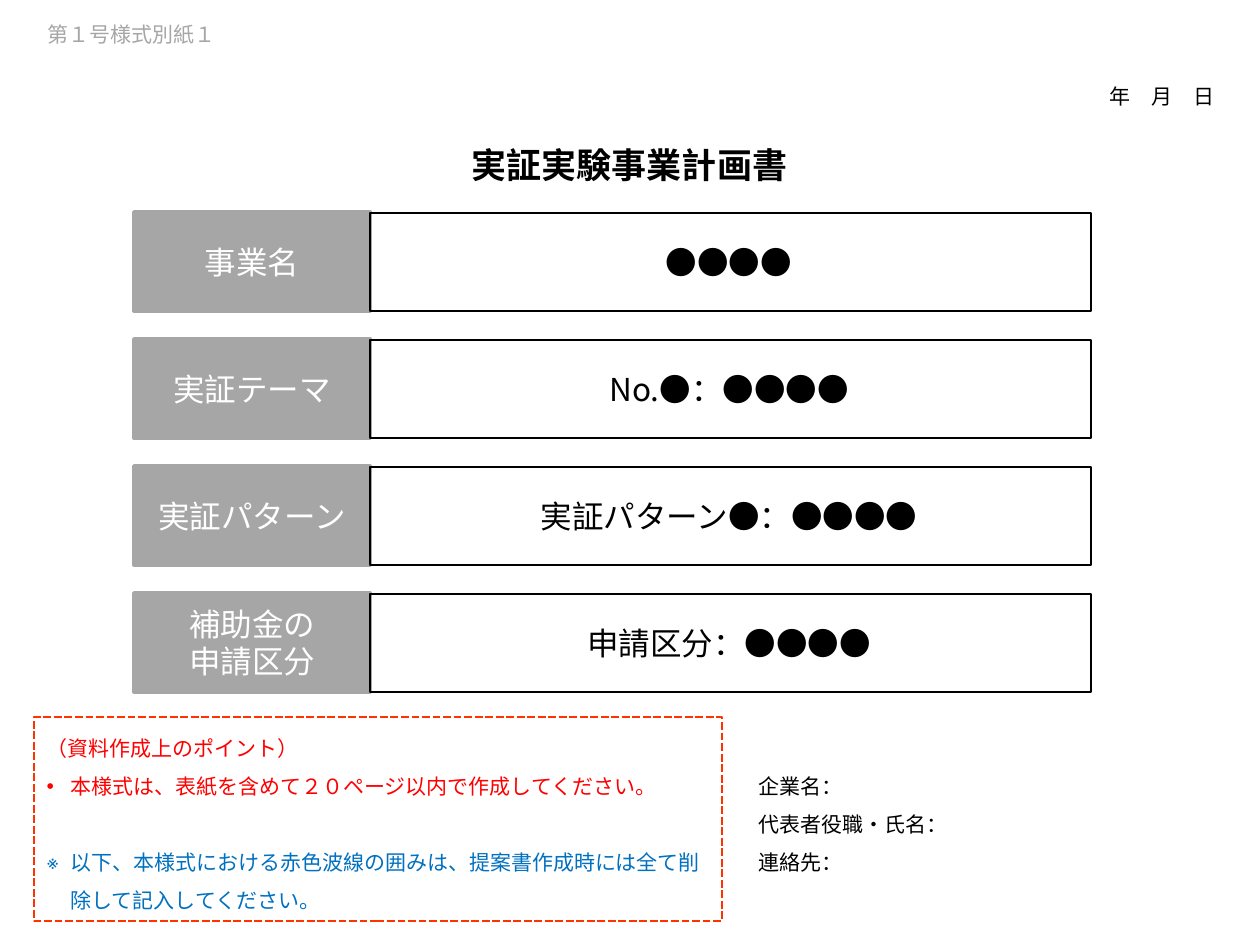
from lxml import etree
from pptx import Presentation
from pptx.dml.color import RGBColor
from pptx.enum.dml import MSO_LINE
from pptx.enum.shapes import MSO_SHAPE
from pptx.enum.text import MSO_ANCHOR, MSO_AUTO_SIZE, PP_ALIGN
from pptx.oxml.ns import qn
from pptx.util import Pt

RECT = MSO_SHAPE.RECTANGLE
DASH = MSO_LINE.SQUARE_DOT
TOP, MID = MSO_ANCHOR.TOP, MSO_ANCHOR.MIDDLE
FIT = MSO_AUTO_SIZE.NONE
LEFT, MIDST, RIGHT = PP_ALIGN.LEFT, PP_ALIGN.CENTER, PP_ALIGN.RIGHT
SCALE = 914400 / 126

theme = {
    "font": "Noto Sans CJK JP",
    "black": RGBColor(0, 0, 0),
    "white": RGBColor(255, 255, 255),
    "gray": RGBColor(0xA6, 0xA6, 0xA6),
    "red": RGBColor(255, 0, 0),
    "blue": RGBColor(0, 0x70, 0xC0),
    "frame": RGBColor(0xFF, 0x33, 0),
    "head": Pt(20),
    "main": Pt(18),
    "small": Pt(12),
}


def place(*box):
    return [round(v * SCALE) for v in box]


def write(shape, text, size, color, align=LEFT, anchor=TOP, space=None, bold=False):
    frame = shape.text_frame
    frame.text = text
    frame.word_wrap = True
    frame.auto_size = FIT
    frame.vertical_anchor = anchor
    for para in frame.paragraphs:
        para.alignment = align
        para.line_spacing = space
        para.space_before = Pt(0)
        for run in para.runs:
            run.font.size = theme[size]
            run.font.bold = bold
            run.font.color.rgb = theme[color]
            run.font.name = theme["font"]
            east = etree.SubElement(run._r.get_or_add_rPr(), qn("a:ea"))
            east.set("typeface", theme["font"])


deck = Presentation()
deck.slide_width, deck.slide_height = place(1260, 945)
slide = deck.slides.add_slide(deck.slide_layouts[1])
shapes = slide.shapes

title = shapes.title
title.left, title.top, title.width, title.height = place(34, 137, 1191, 55)
write(title, "実証実験事業計画書", "head", "black", MIDST, MID, bold=True)

notes = [
    ((35, 15, 319, 38), "第１号様式別紙１", "gray", LEFT, None),
    ((1033, 77, 194, 39), "年　月　日", "black", RIGHT, None),
    ((746, 755, 362, 127), "企業名：\n代表者役職・氏名：\n連絡先：", "black", LEFT, 1.5),
]
for box, text, color, align, space in notes:
    write(shapes.add_textbox(*place(*box)), text, "small", color, align, space=space)

rows = [
    ("事業名", "●●●●"),
    ("実証テーマ", "No.●：●●●●"),
    ("実証パターン", "実証パターン●：●●●●"),
    ("補助金の\n申請区分", "申請区分：●●●●"),
]
for i, (name, value) in enumerate(rows):
    top = 212 + 127 * i
    label = shapes.add_shape(RECT, *place(134, top, 236, 99))
    label.shadow.inherit = False
    label.fill.solid()
    label.fill.fore_color.rgb = theme["gray"]
    label.line.color.rgb = theme["gray"]
    label.line.width = Pt(2)
    write(label, name, "main", "white", MIDST, MID)

    cell = shapes.add_shape(RECT, *place(370, top + 1, 721, 98))
    cell.shadow.inherit = False
    cell.fill.background()
    cell.line.color.rgb = theme["black"]
    cell.line.width = Pt(1)
    entry = shapes.add_textbox(*place(384, top + 25, 690, 50))
    write(entry, value, "main", "black", MIDST, MID)

points = [
    ("（資料作成上のポイント）", None, "red"),
    ("本様式は、表紙を含めて２０ページ以内で作成してください。", "•", "red"),
    ("以下、本様式における赤色波線の囲みは、提案書作成時には全て削除して記入してください。", "※", "blue"),
]
guide = slide.placeholders[1]
guide.left, guide.top, guide.width, guide.height = place(34, 717, 688, 204)
guide.line.color.rgb = theme["frame"]
guide.line.width = Pt(1.5)
guide.line.dash_style = DASH
write(guide, "\n".join(text for text, mark, color in points), "small", "red", space=1.5)
for para, (text, mark, color) in zip(guide.text_frame.paragraphs, points):
    para.runs[0].font.color.rgb = theme[color]
    dent = place(24)[0] if mark else 0
    props = para._p.get_or_add_pPr()
    props.set("marL", str(dent))
    props.set("indent", str(-dent))
    bullet = etree.SubElement(props, qn("a:buChar" if mark else "a:buNone"))
    if mark:
        bullet.set("char", mark)
guide.text_frame.paragraphs[-1].space_before = Pt(21.6)

deck.save("out.pptx")
